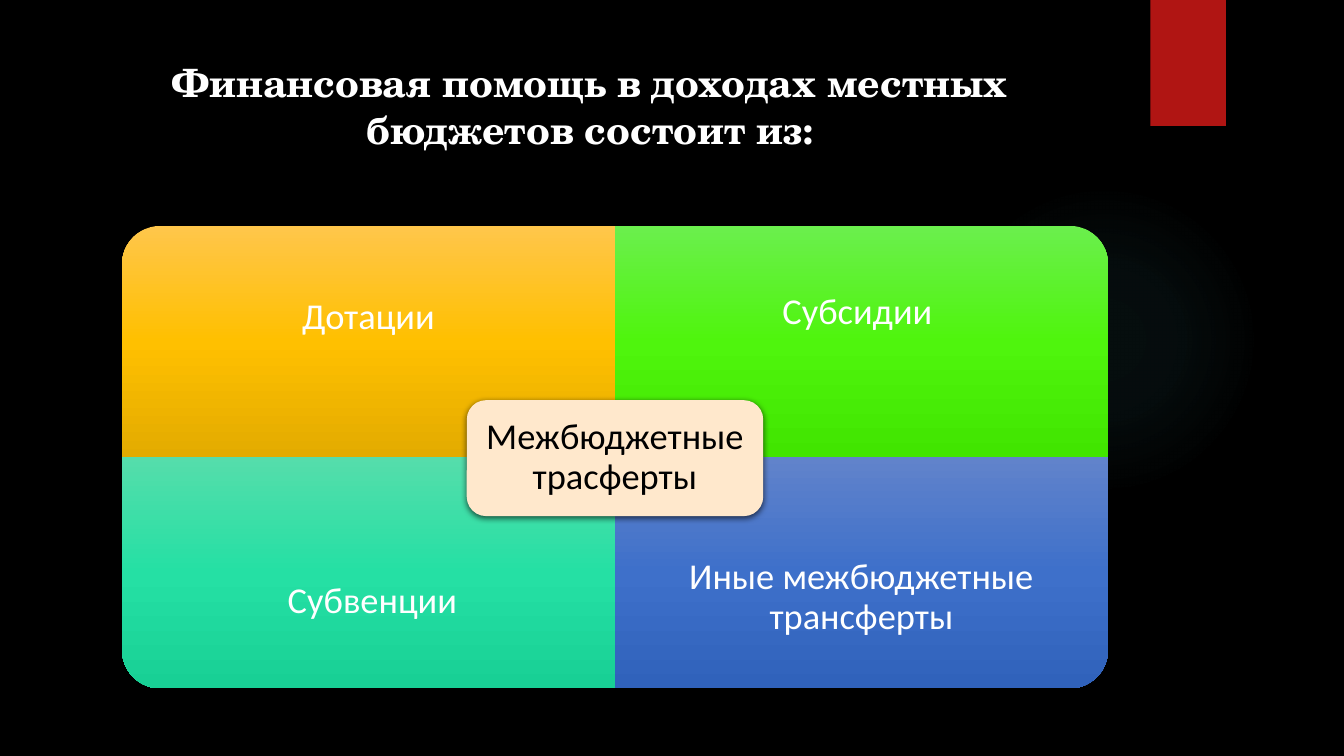
from lxml.etree import SubElement
from pptx import Presentation
from pptx.dml.color import RGBColor
from pptx.enum.shapes import MSO_SHAPE as Preset
from pptx.enum.text import MSO_ANCHOR as Anchor, PP_ALIGN as Align
from pptx.oxml.ns import qn
from pptx.util import Inches, Pt


def color(value):
    return RGBColor.from_string(value)


def add_child(parent, tag, **attributes):
    return SubElement(parent, qn(f"a:{tag}"), {key: str(value) for key, value in attributes.items()})


class SlideBuilder:
    label_style = {"name": "Calibri", "size": Pt(26), "bold": False}
    title_style = {"name": "TeX Gyre Schola", "size": Pt(27.9), "bold": True}

    def __init__(self, slide):
        self.slide = slide

    def background(self, value):
        fill = self.slide.background.fill
        fill.solid()
        fill.fore_color.rgb = color(value)

    def shape(self, preset, box, fill=None, rotation=0):
        shape = self.slide.shapes.add_shape(preset, *map(Inches, box))
        shape.shadow.inherit = False
        shape.line.fill.background()
        shape.rotation = rotation
        if fill:
            shape.fill.solid()
            shape.fill.fore_color.rgb = color(fill)
        return shape

    def gradient(self, shape, stops, angle=None):
        properties = shape._element.spPr
        gradient = add_child(properties, "gradFill", rotWithShape=0)
        properties.find(qn("a:prstGeom")).addnext(gradient)
        stop_list = add_child(gradient, "gsLst")
        for position, value, alpha in stops:
            stop = add_child(stop_list, "gs", pos=position * 1000)
            tint = add_child(stop, "srgbClr", val=value)
            if alpha < 100:
                add_child(tint, "alpha", val=alpha * 1000)
        if angle is None:
            circle = add_child(gradient, "path", path="circle")
            add_child(circle, "fillToRect", l=50000, t=50000, r=50000, b=50000)
        else:
            add_child(gradient, "lin", ang=angle * 60000, scaled=0)

    def shadow(self, shape, alpha, blur, distance):
        effects = shape._element.spPr.find(qn("a:effectLst"))
        shadow = add_child(effects, "outerShdw", blurRad=Pt(blur), dist=Pt(distance),
                           dir=90 * 60000, algn="ctr", rotWithShape=0)
        add_child(add_child(shadow, "srgbClr", val="000000"), "alpha", val=alpha * 1000)

    def text(self, box, text, style, value, anchor=Anchor.MIDDLE, inset=0.2, spacing=0.9):
        frame = self.slide.shapes.add_textbox(*map(Inches, box)).text_frame
        frame_format = {"word_wrap": True, "vertical_anchor": anchor}
        for side in ("left", "top", "right", "bottom"):
            frame_format[f"margin_{side}"] = Inches(inset)
        for name, setting in frame_format.items():
            setattr(frame, name, setting)
        paragraph = frame.paragraphs[0]
        paragraph.alignment = Align.CENTER
        paragraph.line_spacing = spacing
        run = paragraph.add_run()
        run.text = text
        for name, setting in style.items():
            setattr(run.font, name, setting)
        run.font.color.rgb = color(value)

    def quadrant(self, box, rotation, colors):
        left, top, width, height = box
        if rotation % 180:
            left += (width - height) / 2
            top += (height - width) / 2
            width, height = height, width
        shape = self.shape(Preset.ROUND_1_RECTANGLE, (left, top, width, height), rotation=rotation)
        stops = [(position, value, 100) for position, value in zip((0, 50, 100), colors)]
        self.gradient(shape, stops, angle=90)


def main():
    presentation = Presentation()
    presentation.slide_width = Inches(13.33)
    presentation.slide_height = Inches(7.5)
    builder = SlideBuilder(presentation.slides.add_slide(presentation.slide_layouts[6]))
    builder.background("000000")

    glow = builder.shape(Preset.OVAL, (9.41, 1.83, 3.08, 3.08))
    builder.gradient(glow, [(0, "50B9C1", 7), (36, "50B9C1", 6), (69, "50B9C1", 0)])
    ribbon = builder.shape(Preset.RECTANGLE, (11.41, 0, 0.75, 1.25), "B01513")
    builder.shadow(ribbon, 45, 3, 2)
    builder.text((0.71, 0.5, 10.29, 1.53), "Финансовая помощь в доходах местных бюджетов состоит из:",
                 builder.title_style, "FFFFFF", Anchor.TOP, inset=0.08, spacing=1)

    left, top, width, height = 1.21, 2.24, 4.89, 2.295
    quadrants = [
        ("Дотации", 270, ("FFC64B", "FFC000", "E3AB00"), (1.21, 2.33, 4.89, 1.64)),
        ("Субсидии", 0, ("6BEF4D", "4FF50D", "41E500"), (6.1, 2.24, 4.81, 1.72)),
        ("Субвенции", 180, ("55DDAB", "25E0A4", "18D095"), (1.29, 5.11, 4.81, 1.72)),
        ("Иные межбюджетные трансферты", 90, ("6183CB", "3E70CA", "3062BB"), (6.1, 5.11, 4.89, 1.64)),
    ]
    for index, (label, rotation, colors, label_box) in enumerate(quadrants):
        row, column = divmod(index, 2)
        builder.quadrant((left + column * width, top + row * height, width, height), rotation, colors)
        builder.text(label_box, label, builder.label_style, "FFFFFF")

    center = builder.shape(Preset.ROUNDED_RECTANGLE, (4.63, 3.97, 2.94, 1.15), "FFE8CC")
    builder.shadow(center, 63, 4.5, 1.5)
    builder.text((4.69, 4.02, 2.82, 1.04), "Межбюджетные трасферты",
                 builder.label_style, "000000", inset=0.11)

    presentation.save("out.pptx")


if __name__ == "__main__":
    main()
